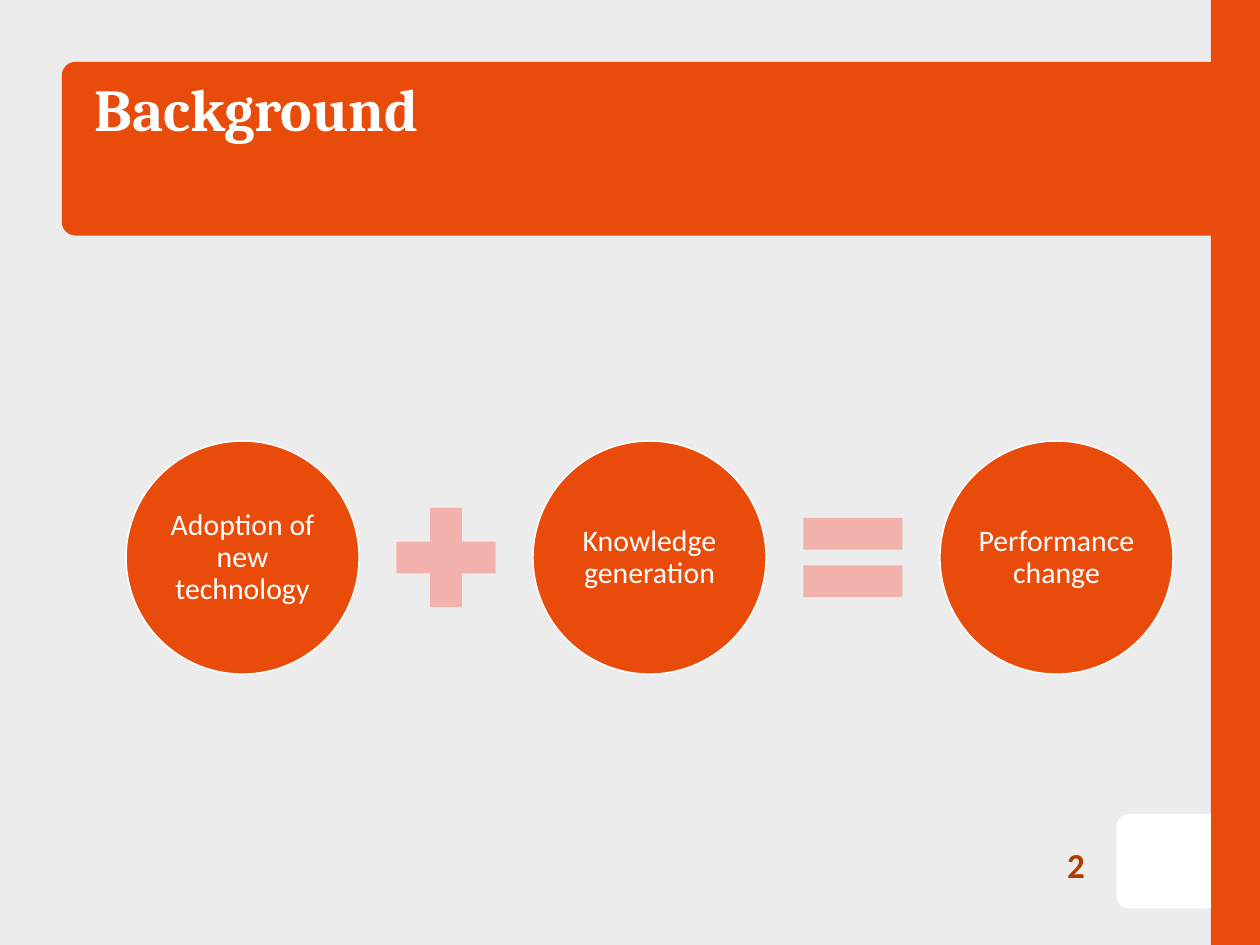
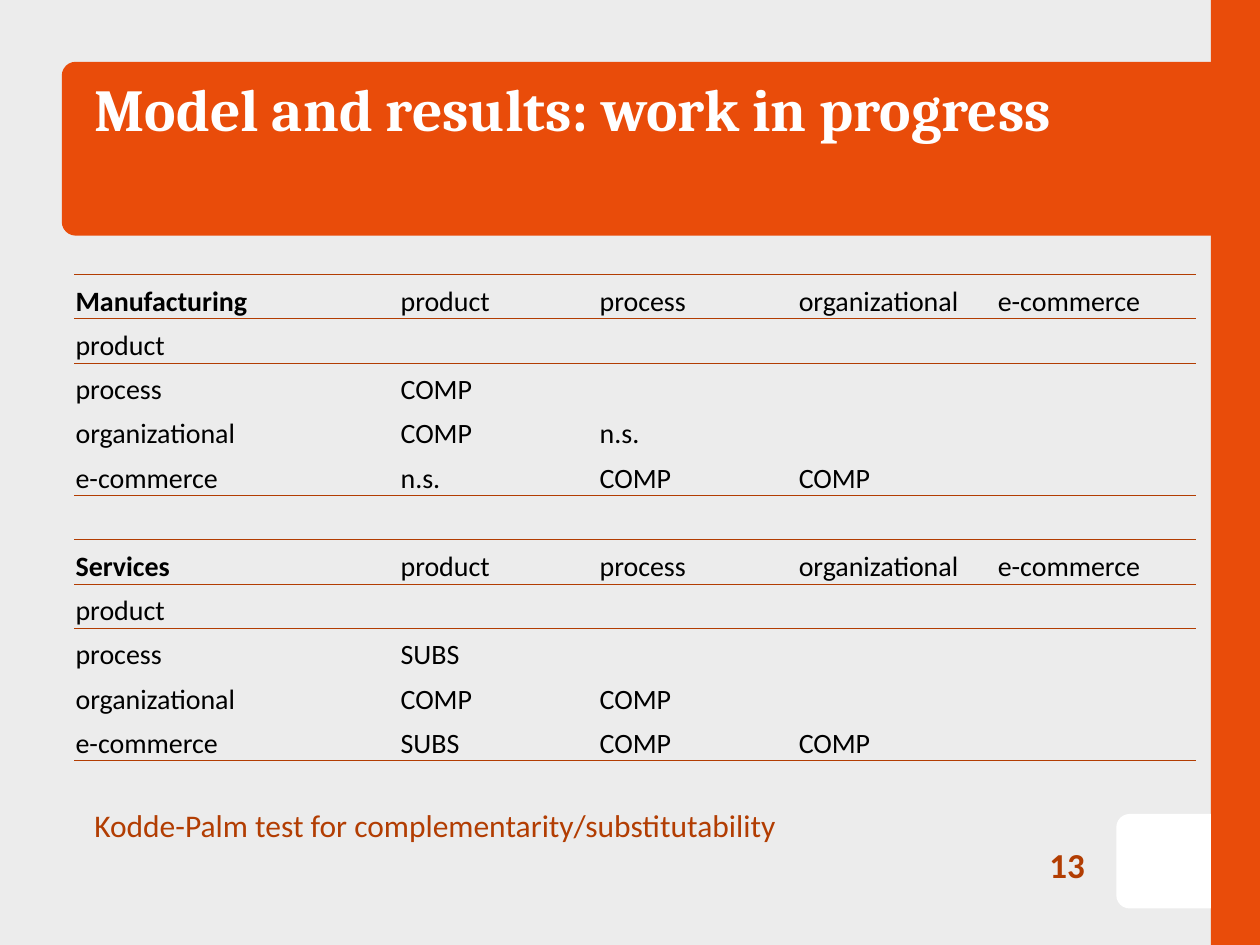
from dataclasses import dataclass

from lxml.etree import SubElement
from pptx import Presentation
from pptx.dml.color import RGBColor
from pptx.enum.shapes import MSO_SHAPE
from pptx.enum.text import MSO_ANCHOR, PP_ALIGN
from pptx.oxml.ns import qn
from pptx.util import Emu, Inches, Pt

# Shared look
ORANGE, RUST, PINK = "E94C0A", "B23D02", "F2B2AB"
WHITE, BLACK, GREY = "FFFFFF", "000000", "ECECEC"
HEAD_FONT, BODY_FONT = "Cambria", "Calibri"
NO_STYLE = "{2D5ABB26-0587-4C30-8999-92F81FD0307C}"

prs = Presentation()
prs.slide_width, prs.slide_height = Inches(10), Inches(7.5)

# Grid of 100 columns by 75 rows
COL, ROW = prs.slide_width / 100, prs.slide_height / 75


@dataclass(frozen=True)
class Box:
    x: float
    y: float
    w: float
    h: float

    def emu(self) -> tuple:
        return (Emu(round(self.x * COL)), Emu(round(self.y * ROW)),
                Emu(round(self.w * COL)), Emu(round(self.h * ROW)))


@dataclass(frozen=True)
class Style:
    size: float
    color: str
    name: str = BODY_FONT
    bold: bool = False
    align: PP_ALIGN = PP_ALIGN.LEFT
    spacing: float = 1.0


@dataclass(frozen=True)
class Band:
    shape: MSO_SHAPE
    box: Box
    fill: str
    adjust: tuple = ()
    rotation: int = 0


TITLE = Style(34, WHITE, HEAD_FONT, True)
NUMBER = Style(20, RUST, bold=True, align=PP_ALIGN.RIGHT)
CIRCLE = Style(17, WHITE, align=PP_ALIGN.CENTER, spacing=0.9)
CAPTION = Style(18, RUST)
CELL, CELL_HEAD = Style(16, BLACK), Style(16, BLACK, bold=True)

TITLE_BOX = Box(6.5, 4.9, 90.8, 13.8)
NUMBER_BOX = Box(79.9, 66.3, 6.2, 4.7)
BANDS = (
    Band(MSO_SHAPE.RECTANGLE, Box(96.1, 0, 3.9, 75), ORANGE),
    Band(MSO_SHAPE.ROUND_2_SAME_RECTANGLE, Box(88.6, 64.6, 7.5, 7.5), WHITE, (0.14, 0), 270),
    Band(MSO_SHAPE.ROUNDED_RECTANGLE, Box(4.9, 4.9, 93.9, 13.8), ORANGE, (0.08,)),
)


def rgb(color: str) -> RGBColor:
    return RGBColor.from_string(color)


def apply(target, values: dict) -> None:
    for key, value in values.items():
        setattr(target, key, value)


def margins(left: float, top: float, right: float, bottom: float) -> dict:
    return {"margin_left": Inches(left), "margin_top": Inches(top),
            "margin_right": Inches(right), "margin_bottom": Inches(bottom)}


def write(tf, text: str, style: Style) -> None:
    p = tf.paragraphs[0]
    apply(p, {"alignment": style.align, "line_spacing": style.spacing})
    r = p.add_run()
    r.text = text
    apply(r.font, {"size": Pt(style.size), "name": style.name, "bold": style.bold})
    r.font.color.rgb = rgb(style.color)


def add_text(s, box: Box, text: str, style: Style, **frame) -> None:
    tf = s.shapes.add_textbox(*box.emu()).text_frame
    apply(tf, {"word_wrap": True, **frame})
    write(tf, text, style)


def add_filled(s, kind: MSO_SHAPE, box: Box, fill: str):
    sp = s.shapes.add_shape(kind, *box.emu())
    sp.shadow.inherit = False
    sp.fill.solid()
    sp.fill.fore_color.rgb = rgb(fill)
    sp.line.fill.background()
    return sp


def add_bands(s) -> None:
    """Draw the bands and move them to the layout, behind its placeholders."""
    tree = s.slide_layout.shapes.element
    for position, band in enumerate(BANDS, start=2):
        sp = add_filled(s, band.shape, band.box, band.fill)
        sp.rotation = band.rotation
        for i, value in enumerate(band.adjust):
            sp.adjustments[i] = value
        tree.insert(position, sp.element)


def add_slide(title: str, number: str):
    s = prs.slides.add_slide(prs.slide_layouts[5])
    sp = s.shapes.title
    sp.left, sp.top, sp.width, sp.height = TITLE_BOX.emu()
    apply(sp.text_frame, {"vertical_anchor": MSO_ANCHOR.TOP, **margins(0.1, 0.08, 0.1, 0.05)})
    write(sp.text_frame, title, TITLE)
    add_text(s, NUMBER_BOX, number, NUMBER,
             vertical_anchor=MSO_ANCHOR.MIDDLE, **margins(0, 0, 0, 0))
    return s


def add_equation(s, terms: tuple, signs: tuple) -> None:
    left, middle, size, step, sign_size = 10, 44.25, 18.5, 32.3, 10.7
    for i, term in enumerate(terms):
        sp = add_filled(s, MSO_SHAPE.OVAL,
                        Box(left + i * step, middle - size / 2, size, size), ORANGE)
        sp.line.color.rgb = rgb(WHITE)
        sp.line.width = Pt(0.85)
        apply(sp.text_frame, {"word_wrap": True, "vertical_anchor": MSO_ANCHOR.MIDDLE,
                              **margins(0.02, 0.02, 0.02, 0.02)})
        write(sp.text_frame, term, CIRCLE)
    for i, sign in enumerate(signs):
        gap_center = left + i * step + (size + step) / 2
        add_filled(s, sign, Box(gap_center - sign_size / 2, middle - sign_size / 2,
                                sign_size, sign_size), PINK)


def add_border(cell, side: str) -> None:
    ln = SubElement(cell._tc.get_or_add_tcPr(), qn(f"a:{side}"), w=str(Pt(0.5)))
    SubElement(SubElement(ln, qn("a:solidFill")), qn("a:srgbClr"), val=RUST)


def add_results(s, rows: list, ruled: set, heads: set) -> None:
    """Draw the table; ruled holds the row boundaries that carry a line."""
    widths = (17.2, 8.6) + (15.8,) * 4
    row_height = 3.51
    frame = s.shapes.add_table(len(rows), len(widths), *Box(
        5.9, 21.8, sum(widths), row_height * len(rows)).emu())
    table = frame.table
    apply(table, {"first_row": False, "horz_banding": False})
    for style_id in frame.element.iter(qn("a:tableStyleId")):
        style_id.text = NO_STYLE
    for column, width in zip(table.columns, widths):
        column.width = Emu(round(width * COL))
    for i, (label, *values) in enumerate(rows):
        texts = [label, "", *values]
        for j in range(len(widths)):
            cell = table.cell(i, j)
            apply(cell, {"vertical_anchor": MSO_ANCHOR.BOTTOM, **margins(0.01, 0.01, 0.01, 0)})
            for side, boundary in (("lnT", i), ("lnB", i + 1)):
                if boundary in ruled:
                    add_border(cell, side)
            cell.fill.background()
            if j < len(texts) and texts[j]:
                write(cell.text_frame, texts[j], CELL_HEAD if j == 0 and i in heads else CELL)


def sector(name: str, results: tuple) -> list:
    return [(name, *PRACTICES)] + [(a, *r) for a, r in zip(PRACTICES, results)]


# Slide background
prs.slide_master.background.fill.solid()
prs.slide_master.background.fill.fore_color.rgb = rgb(GREY)

# Background slide
s = add_slide("Background", "2")
add_bands(s)
add_equation(s, ("Adoption of new technology", "Knowledge generation", "Performance change"),
             (MSO_SHAPE.MATH_PLUS, MSO_SHAPE.MATH_EQUAL))

# Results slide
PRACTICES = ("product", "process", "organizational", "e-commerce")
manufacturing = sector("Manufacturing", (
    (), ("COMP",), ("COMP", "n.s."), ("n.s.", "COMP", "COMP")))
services = sector("Services", (
    (), ("SUBS",), ("COMP", "COMP"), ("SUBS", "COMP", "COMP")))
s = add_slide("Model and results: work in progress", "13")
add_results(s, manufacturing + [("",)] + services, ruled={0, 1, 5, 6, 7, 11}, heads={0, 6})
add_text(s, Box(6.5, 63.5, 60.8, 4), "Kodde-Palm test for complementarity/substitutability", CAPTION)

prs.save("out.pptx")
